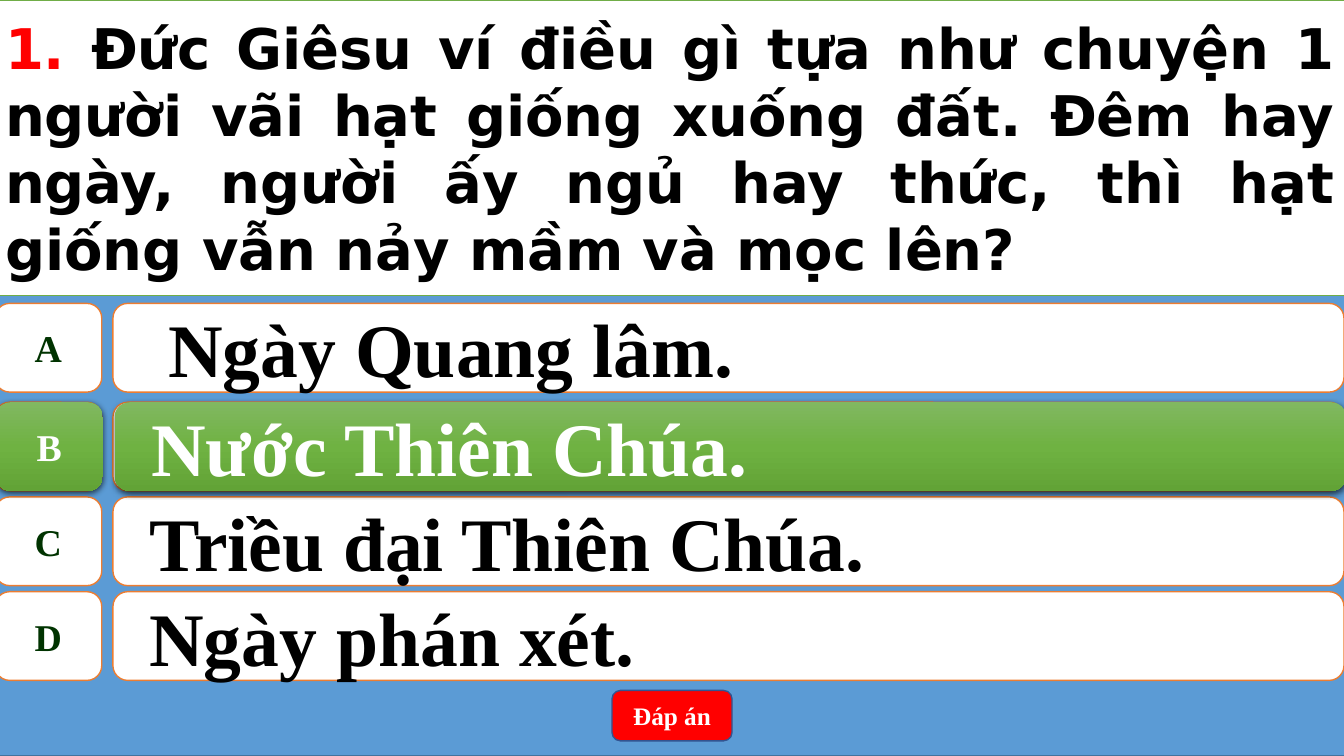
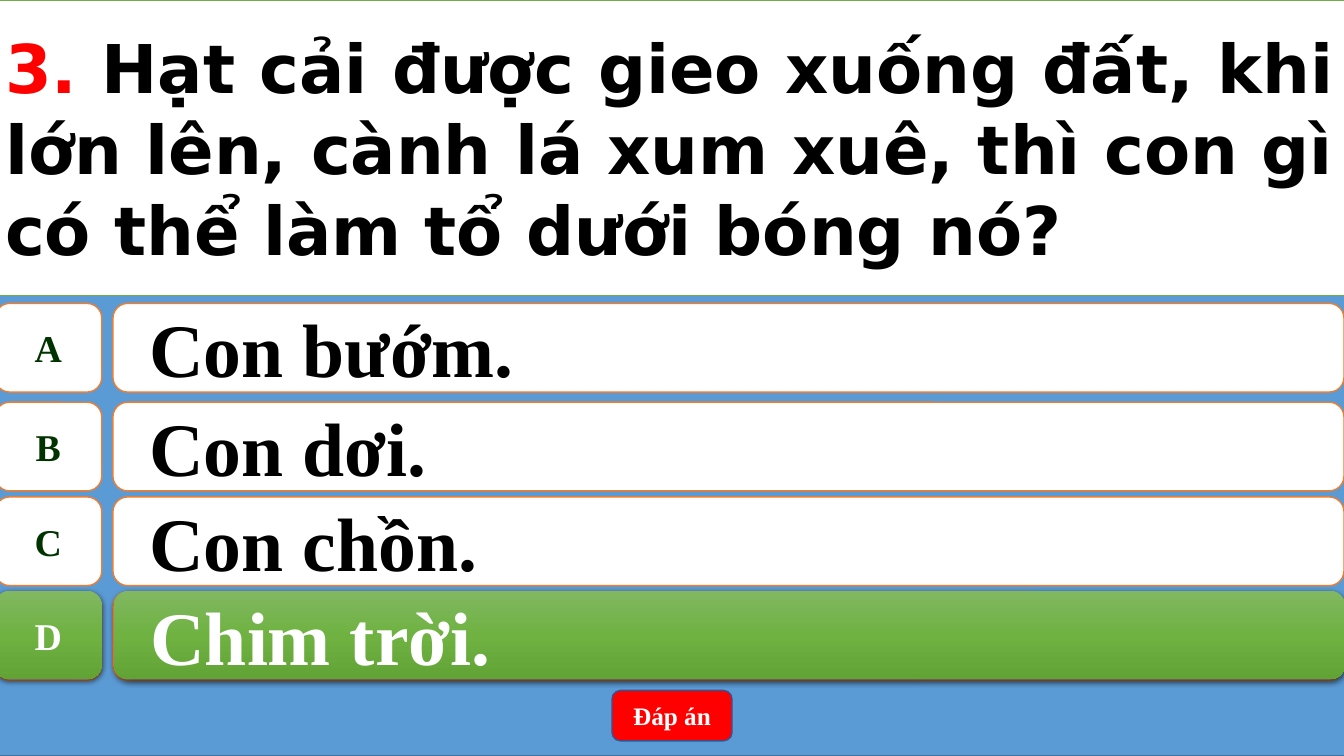
from dataclasses import dataclass

from lxml import etree
from pptx import Presentation
from pptx import util as u
from pptx.dml.color import RGBColor
from pptx.enum import shapes, text
from pptx.oxml import ns

COLORS = {
    "backdrop": "5B9BD5", "backdrop_edge": "43739E",
    "white": "FFFFFF", "black": "000000",
    "orange": "ED7D31", "green": "70AD47", "letter": "003300",
    "red": "FF0000", "button_edge": "325491",
}
GREEN_STOPS = {0: "81B861", 50000: "6FB242", 100000: "62A336"}
SERIF, SANS = "Times New Roman", "DejaVu Sans"
LETTERS = "ABCD"
ROW_TOPS = (3.01, 3.99, 4.93, 5.87)
ROW_HEIGHT = 0.88
LEFT, FULL_WIDTH = -0.05, 13.39


@dataclass
class Question:
    number: str
    wording: str
    size: int
    answers: tuple[str, ...]
    correct: int
    nudge: tuple[float, float]  # offset of the revealed answer


@dataclass
class Part:
    kind: shapes.MSO_SHAPE
    left: float
    width: float
    size: int
    align: text.PP_ALIGN
    wrap: bool


BADGE = Part(shapes.MSO_SHAPE.FLOWCHART_ALTERNATE_PROCESS, LEFT, 1.06, 27,
             text.PP_ALIGN.CENTER, False)
BAR = Part(shapes.MSO_SHAPE.ROUNDED_RECTANGLE, 1.12, 12.21, 54,
           text.PP_ALIGN.LEFT, True)
BUTTON = Part(shapes.MSO_SHAPE.ROUNDED_RECTANGLE, 6.07, 1.19, 18,
              text.PP_ALIGN.CENTER, True)
BACKDROP = Part(shapes.MSO_SHAPE.RECTANGLE, LEFT, FULL_WIDTH, 18,
                text.PP_ALIGN.CENTER, True)

QUESTIONS = (
    Question("1. ", "Đức Giêsu ví điều gì tựa như chuyện 1 người vãi hạt giống "
             "xuống đất. Đêm hay ngày, người ấy ngủ hay thức, thì hạt giống "
             "vẫn nảy mầm và mọc lên?", 40,
             (" Ngày Quang lâm.", "Nước Thiên Chúa.",
              "Triều đại Thiên Chúa.", "Ngày phán xét."), 1, (0.01, 0)),
    Question("3. ", "Hạt cải được gieo xuống đất, khi lớn lên, cành lá xum xuê, "
             "thì con gì có thể làm tổ dưới bóng nó?", 48,
             ("Con bướm.", "Con dơi.", "Con chồn.", "Chim trời."), 3, (0, -0.01)),
)


def rgb(name: str) -> RGBColor:
    return RGBColor.from_string(COLORS[name])


def apply(target, formats: dict) -> None:
    for name, value in formats.items():
        setattr(target, name, value)


def paint(shape, fill: str, edge: str) -> None:
    shape.fill.solid()
    shape.fill.fore_color.rgb = rgb(fill)
    shape.line.color.rgb = rgb(edge)
    shape.line.width = u.Pt(1)


def paint_revealed(shape) -> None:
    """Green gradient with a soft shadow below."""
    shape.line.fill.background()
    shape.fill.gradient()
    shape.fill.gradient_angle = 270
    stops = shape.element.find(".//" + ns.qn("a:gsLst"))
    stops.clear()
    for position, color in GREEN_STOPS.items():
        stop = etree.SubElement(stops, ns.qn("a:gs"), pos=str(position))
        etree.SubElement(stop, ns.qn("a:srgbClr"), val=color)
    effects = shape.element.find(".//" + ns.qn("a:effectLst"))
    shadow = etree.SubElement(
        effects, ns.qn("a:outerShdw"), blurRad=str(u.Pt(4.5)),
        dist=str(u.Pt(1.5)), dir="5400000", algn="ctr", rotWithShape="0")
    shade = etree.SubElement(shadow, ns.qn("a:srgbClr"), val=COLORS["black"])
    etree.SubElement(shade, ns.qn("a:alpha"), val="63000")


def add_run(paragraph, wording: str, size: int, face: str, color: str) -> None:
    run = paragraph.add_run()
    run.text = wording
    apply(run.font, {"size": u.Pt(size), "name": face, "bold": True})
    run.font.color.rgb = rgb(color)


def add_part(holder, part: Part, top: float, height: float,
             wording: str = "", color: str = "white", dx: float = 0):
    shape = holder.add_shape(part.kind, u.Inches(part.left + dx), u.Inches(top),
                             u.Inches(part.width), u.Inches(height))
    shape.shadow.inherit = False
    if wording:
        frame = shape.text_frame
        apply(frame, {"word_wrap": part.wrap,
                      "vertical_anchor": text.MSO_ANCHOR.MIDDLE})
        frame.paragraphs[0].alignment = part.align
        add_run(frame.paragraphs[0], wording, part.size, SERIF, color)
    return shape


def add_answer(slide, row: int, answer: str, revealed: bool = False,
               nudge: tuple[float, float] = (0, 0)) -> None:
    group = slide.shapes.add_group_shape().shapes
    top = ROW_TOPS[row] + nudge[1]
    colors = ("white", "white") if revealed else ("letter", "black")
    badge = add_part(group, BADGE, top, ROW_HEIGHT, LETTERS[row], colors[0], nudge[0])
    bar = add_part(group, BAR, top, ROW_HEIGHT, answer, colors[1],
                   0.01 + nudge[0] if revealed else 0)
    paragraph = bar.text_frame.paragraphs[0]
    paragraph.level = 1
    indents = paragraph._p.get_or_add_pPr()
    indents.set("marL", str(u.Inches(0.5)))
    indents.set("indent", str(u.Inches(-0.28)))
    for shape in (badge, bar):
        if revealed:
            paint_revealed(shape)
        else:
            paint(shape, "white", "orange")


def add_question(slide, question: Question) -> None:
    title = slide.shapes.title
    apply(title, {"left": u.Inches(LEFT), "top": u.Inches(0),
                  "width": u.Inches(FULL_WIDTH), "height": u.Inches(2.93)})
    paint(title, "white", "green")
    apply(title.text_frame, {"word_wrap": True,
                             "auto_size": text.MSO_AUTO_SIZE.NONE,
                             "vertical_anchor": text.MSO_ANCHOR.MIDDLE})
    paragraph = title.text_frame.paragraphs[0]
    paragraph.alignment = text.PP_ALIGN.JUSTIFY
    add_run(paragraph, question.number, question.size, SANS, "red")
    add_run(paragraph, question.wording, question.size, SANS, "black")
    # Bring the question in front of the backdrop
    title.element.getparent().append(title.element)


def build_slide(deck, question: Question) -> None:
    slide = deck.slides.add_slide(deck.slide_layouts[5])
    # Backdrop and button
    paint(add_part(slide.shapes, BACKDROP, 0, 7.5), "backdrop", "backdrop_edge")
    button = add_part(slide.shapes, BUTTON, 6.85, 0.5, "Đáp án")
    paint(button, "red", "button_edge")
    # Answers, with the correct one revealed on top
    for row, answer in enumerate(question.answers):
        add_answer(slide, row, answer)
    add_answer(slide, question.correct, question.answers[question.correct],
               True, question.nudge)
    add_question(slide, question)


def main() -> None:
    deck = Presentation()
    apply(deck, {"slide_width": u.Inches(13.33), "slide_height": u.Inches(7.5)})
    for question in QUESTIONS:
        build_slide(deck, question)
    deck.save("out.pptx")


if __name__ == "__main__":
    main()
